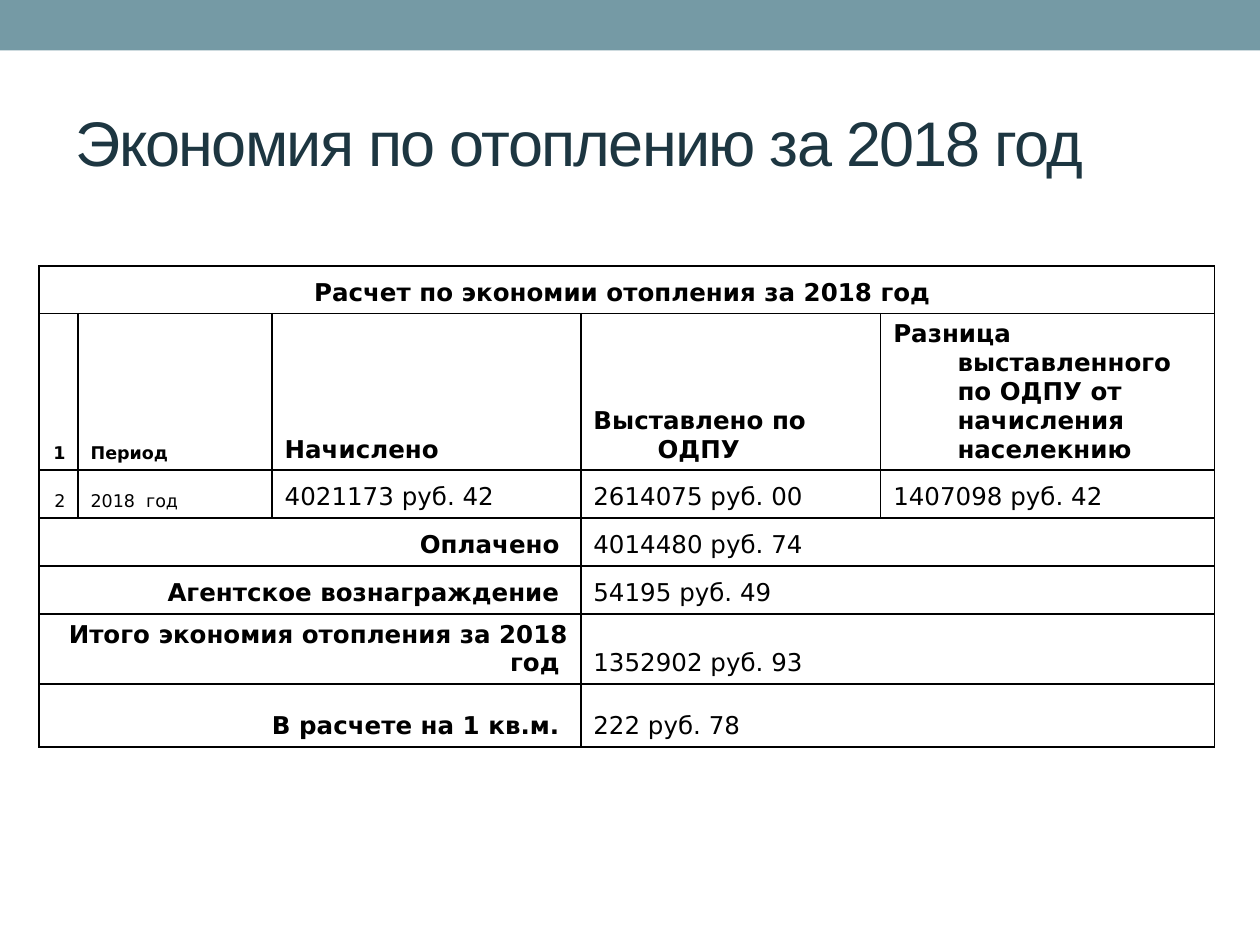
from dataclasses import dataclass

from lxml.etree import SubElement
from pptx import Presentation
from pptx.dml.color import RGBColor as Rgb
from pptx.enum.shapes import MSO_SHAPE as Shape
from pptx.enum.text import MSO_ANCHOR as Anchor, MSO_AUTO_SIZE as AutoSize, PP_ALIGN as Align
from pptx.oxml.ns import qn
from pptx.util import Inches, Pt


@dataclass(frozen=True)
class Theme:
    band: Rgb = Rgb(0x75, 0x9A, 0xA5)
    heading: Rgb = Rgb(0x1D, 0x36, 0x41)
    ink: Rgb = Rgb(0, 0, 0)
    heading_font: str = "Arial"
    table_font: str = "DejaVu Sans"
    heading_size: int = 36
    body_size: int = 14
    small_size: int = 10
    border: int = 1
    indent: float = 0.51


@dataclass(frozen=True)
class Entry:
    text: str
    span: int = 1
    bold: bool = False
    align: Align = Align.LEFT
    size: int = Theme.body_size


THEME = Theme()
COLUMN_WIDTHS = [0.31, 1.54, 2.45, 2.38, 2.65]
ROW_HEIGHTS = [0.38, 1.07, 0.38, 0.38, 0.38, 0.38, 0.5]


def set_format(target, values: dict) -> None:
    for name, value in values.items():
        setattr(target, name, value)


def numbered_row(number: str, period: str, *columns: str, bold: bool = False) -> list[Entry]:
    return [Entry(number, bold=bold, align=Align.RIGHT, size=THEME.small_size),
            Entry(period, bold=bold, size=THEME.small_size),
            *(Entry(text, bold=bold) for text in columns)]


def summary_row(label: str, amount: str) -> list[Entry]:
    return [Entry(label, span=3, bold=True, align=Align.RIGHT), Entry(amount, span=2)]


ROWS = [
    [Entry("Расчет по экономии отопления за 2018 год ", span=5, bold=True, align=Align.CENTER)],
    numbered_row("1", "Период", "Начислено", "Выставлено по ОДПУ",
                 "Разница выставленного по ОДПУ от начисления населекнию", bold=True),
    numbered_row("2", "2018  год", "4021173 руб. 42", "2614075 руб. 00", "1407098 руб. 42"),
    summary_row("Оплачено ", "4014480 руб. 74"),
    summary_row("Агентское вознаграждение ", "54195 руб. 49"),
    summary_row("Итого экономия отопления за 2018 год ", "1352902 руб. 93"),
    summary_row("В расчете на 1 кв.м. ", "222 руб. 78"),
]


def draw_borders(cell) -> None:
    cell.fill.background()
    properties = cell._tc.get_or_add_tcPr()
    for position, side in enumerate(("lnL", "lnR", "lnT", "lnB")):
        line = SubElement(properties, qn(f"a:{side}"), w=str(Pt(THEME.border)))
        fill = SubElement(line, qn("a:solidFill"))
        SubElement(fill, qn("a:srgbClr"), val=str(THEME.ink))
        properties.insert(position, line)  # borders come before the fill


def write_entry(cell, entry: Entry) -> None:
    cell.vertical_anchor = Anchor.BOTTOM
    paragraph = cell.text_frame.paragraphs[0]
    paragraph.alignment = entry.align
    hanging = Inches(THEME.indent)
    set_format_xml = {"marL": hanging, "indent": -hanging}
    for name, value in set_format_xml.items():
        paragraph._p.get_or_add_pPr().set(name, str(value))
    run = paragraph.add_run()
    run.text = entry.text
    set_format(run.font, {"name": THEME.table_font, "size": Pt(entry.size), "bold": entry.bold})
    run.font.color.rgb = THEME.ink


def draw_band(slide) -> None:
    band = slide.shapes.add_shape(Shape.RECTANGLE, 0, 0, Inches(10), Inches(0.4))
    band.shadow.inherit = False
    band.fill.solid()
    band.fill.fore_color.rgb = THEME.band
    band.line.fill.background()


def write_title(slide, text: str) -> None:
    title = slide.shapes.title
    set_format(title, {"left": Inches(0.5), "top": Inches(0.58),
                       "width": Inches(9), "height": Inches(1.08)})
    set_format(title.text_frame, {"vertical_anchor": Anchor.MIDDLE, "word_wrap": True,
                                  "auto_size": AutoSize.NONE})
    paragraph = title.text_frame.paragraphs[0]
    paragraph.alignment = Align.LEFT
    run = paragraph.add_run()
    run.text = text
    set_format(run.font, {"name": THEME.heading_font, "size": Pt(THEME.heading_size)})
    run.font.color.rgb = THEME.heading
    run._r.get_or_add_rPr().set("spc", "-100")  # letter spacing of -1 pt


def draw_savings_table(slide, rows: list[list[Entry]]) -> None:
    table = slide.shapes.add_table(len(rows), len(COLUMN_WIDTHS), Inches(0.31), Inches(2.11),
                                   Inches(sum(COLUMN_WIDTHS)), Inches(sum(ROW_HEIGHTS))).table
    set_format(table, {"first_row": False, "horz_banding": False})
    for column, width in zip(table.columns, COLUMN_WIDTHS):
        column.width = Inches(width)
    for row, height in zip(table.rows, ROW_HEIGHTS):
        row.height = Inches(height)
    for cell in table.iter_cells():
        draw_borders(cell)
    for row_index, entries in enumerate(rows):
        column_index = 0
        for entry in entries:
            cell = table.cell(row_index, column_index)
            column_index += entry.span
            if entry.span > 1:
                cell.merge(table.cell(row_index, column_index - 1))
            write_entry(cell, entry)


def main() -> None:
    deck = Presentation()
    set_format(deck, {"slide_width": Inches(10), "slide_height": Inches(7.5)})
    slide = deck.slides.add_slide(deck.slide_layouts[5])  # title only
    # Top band, heading and the savings table
    draw_band(slide)
    write_title(slide, "Экономия по отоплению за 2018 год")
    draw_savings_table(slide, ROWS)
    deck.save("out.pptx")


if __name__ == "__main__":
    main()
